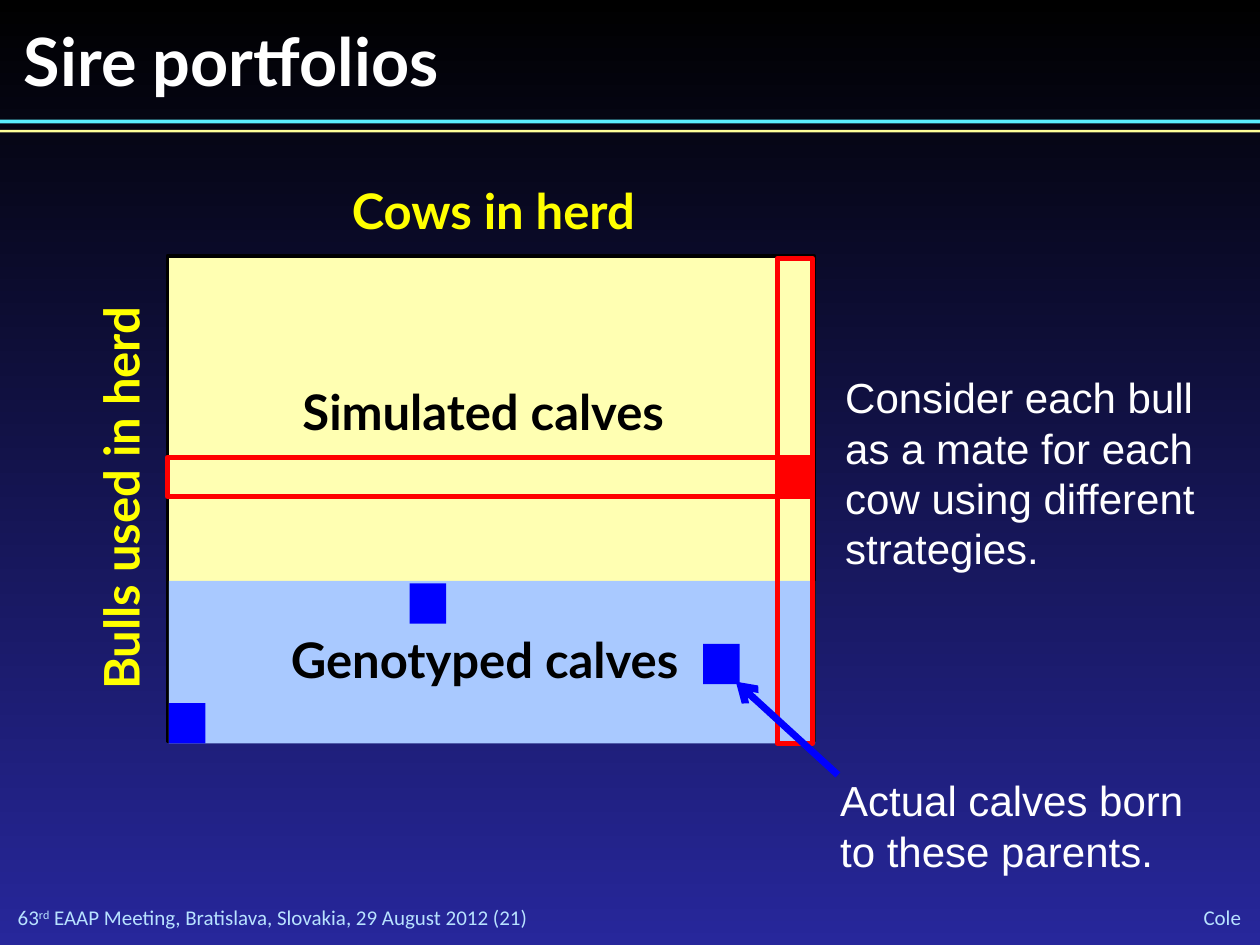
from lxml import etree
from pptx import Presentation
from pptx.dml.color import RGBColor
from pptx.enum.shapes import MSO_CONNECTOR, MSO_SHAPE
from pptx.enum.text import MSO_ANCHOR, PP_ALIGN
from pptx.oxml.ns import qn
from pptx.util import Emu, Pt

PX = 9144  # EMU per px, 100 px to the inch

BLACK = RGBColor(0x00, 0x00, 0x00)
WHITE = RGBColor(0xFF, 0xFF, 0xFF)
NAVY = RGBColor(0x27, 0x27, 0x9B)
BLUE = RGBColor(0x00, 0x00, 0xFF)
RED = RGBColor(0xFF, 0x00, 0x00)
YELLOW = RGBColor(0xFF, 0xFF, 0x00)
CYAN_RULE = RGBColor(0x5B, 0xEF, 0xFF)
YELLOW_RULE = RGBColor(0xFF, 0xFF, 0x99)
SIMULATED = RGBColor(0xFF, 0xFF, 0xB2)
GENOTYPED = RGBColor(0xA9, 0xC9, 0xFF)
FOOTER = RGBColor(0xB8, 0xE2, 0xFF)


def px(*lengths):
    return [Emu(n * PX) for n in lengths]


class SlideBuilder:
    def __init__(self, slide):
        self.s = slide

    def background(self, top, bottom):
        fill = self.s.background.fill
        fill.gradient()
        fill.gradient_angle = 270
        for stop, color, position in zip(fill.gradient_stops, (top, bottom), (0, 1)):
            stop.color.rgb = color
            stop.position = position

    def rect(self, box, fill=None, line=None, width=0):
        sp = self.s.shapes.add_shape(MSO_SHAPE.RECTANGLE, *px(*box))
        sp.shadow.inherit = False
        if fill is None:
            sp.fill.background()
        else:
            sp.fill.solid()
            sp.fill.fore_color.rgb = fill
        if line is None:
            sp.line.fill.background()
        else:
            sp.line.color.rgb = line
            sp.line.width = Pt(width)

    def text(self, box, parts, size, font, color, bold=False, align=PP_ALIGN.LEFT,
             anchor=MSO_ANCHOR.TOP, inset=True, rotation=0):
        """Add one paragraph; every second part is superscript."""
        sp = self.s.shapes.add_textbox(*px(*box))
        sp.rotation = rotation
        tf = sp.text_frame
        tf.word_wrap = True
        tf.vertical_anchor = anchor
        if not inset:
            tf.margin_left = tf.margin_top = tf.margin_right = tf.margin_bottom = 0
        p = tf.paragraphs[0]
        p.alignment = align
        for i, part in enumerate(parts):
            r = p.add_run()
            r.text = part
            r.font.size = Pt(size)
            r.font.name = font
            r.font.bold = bold
            r.font.color.rgb = color
            if i % 2:
                r._r.get_or_add_rPr().set("baseline", "30000")

    def label(self, box, text, color, rotation=0):
        self.text(box, [text], 28, "Lato", color, bold=True,
                  align=PP_ALIGN.CENTER, rotation=rotation)

    def note(self, box, text):
        self.text(box, [text], 24, "Arial", WHITE)

    def footer(self, box, parts, align=PP_ALIGN.LEFT):
        self.text(box, parts, 12, "Calibri", FOOTER, align=align,
                  anchor=MSO_ANCHOR.MIDDLE, inset=False)

    def arrow(self, start, end, color, width):
        c = self.s.shapes.add_connector(MSO_CONNECTOR.STRAIGHT, *px(*start, *end))
        c.line.color.rgb = color
        c.line.width = Pt(width)
        etree.SubElement(c.line._get_or_add_ln(), qn("a:tailEnd"), type="arrow")
        etree.SubElement(c._element.spPr, qn("a:effectLst"))


def main():
    prs = Presentation()
    prs.slide_width, prs.slide_height = px(1000, 750)
    b = SlideBuilder(prs.slides.add_slide(prs.slide_layouts[6]))

    b.background(BLACK, NAVY)
    b.footer((14, 718, 522, 20),
             ["63", "rd", " EAAP Meeting, Bratislava, Slovakia, 29 August 2012 (21)"])
    b.rect((0, 95, 1000, 3), CYAN_RULE)
    b.rect((0, 103, 1000, 2), YELLOW_RULE)
    b.footer((872, 717, 113, 21), ["Cole"], PP_ALIGN.RIGHT)
    b.text((19, 16, 900, 64), ["Sire portfolios"], 38, "Lato", WHITE, bold=True, inset=False)

    # Mating grid: bulls by cows
    b.rect((133, 203, 513, 385), SIMULATED, BLACK, 2)
    b.rect((134, 461, 513, 129), GENOTYPED)
    b.label((-97, 367, 385, 57), "Bulls used in herd", YELLOW, rotation=270)
    b.label((199, 138, 385, 57), "Cows in herd", YELLOW)
    b.label((192, 495, 385, 57), "Genotyped calves", BLACK)

    # One cow, one bull and the mating where they cross
    b.rect((617, 205, 28, 385), line=RED, width=3)
    b.note((661, 290, 320, 172),
           "Consider each bull as a mate for each cow using different strategies.")
    b.rect((133, 363, 511, 31), line=RED, width=3)
    b.rect((617, 363, 29, 32), RED)

    # Calves already born
    for left, top in ((134, 558), (325, 463), (558, 511)):
        b.rect((left, top, 29, 32), BLUE)
    b.note((657, 610, 320, 91), "Actual calves born to these parents.")
    b.arrow((665, 615), (584, 541), BLUE, 4)
    b.label((191, 298, 385, 57), "Simulated calves", BLACK)

    prs.save("out.pptx")


if __name__ == "__main__":
    main()
